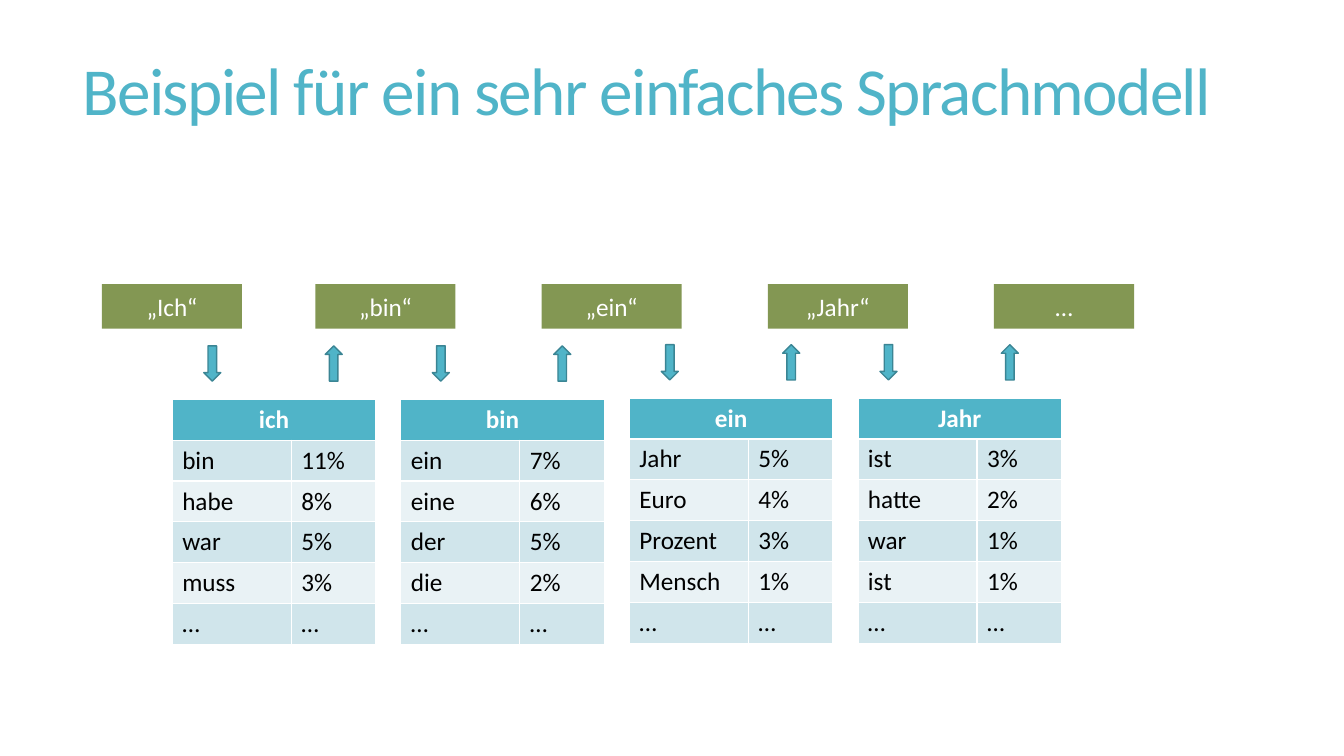
from pptx import Presentation
from pptx.dml.color import RGBColor
from pptx.enum.shapes import MSO_SHAPE as Shape
from pptx.enum.text import MSO_ANCHOR as Anchor, PP_ALIGN as Align
from pptx.util import Cm, Pt

COLORS = {
    "teal": "50B4C8",
    "teal_dark": "3B8594",
    "green": "839753",
    "band_dark": "D0E5EB",
    "band_light": "E9F2F5",
    "white": "FFFFFF",
    "black": "000000",
}
WORDS = [(2.57, "„Ich“"), (7.95, "„bin“"), (13.65, "„ein“"), (19.35, "„Jahr“"), (25.05, "…")]
MODELS = [
    ("ich", 10.06, 5.35, [("bin", "11%"), ("habe", "8%"), ("war", "5%"), ("muss", "3%"), ("…", "…")]),
    ("bin", 10.06, 11.11, [("ein", "7%"), ("eine", "6%"), ("der", "5%"), ("die", "2%"), ("…", "…")]),
    ("ein", 10.03, 16.88, [("Jahr", "5%"), ("Euro", "4%"), ("Prozent", "3%"), ("Mensch", "1%"), ("…", "…")]),
    ("Jahr", 10.03, 22.39, [("ist", "3%"), ("hatte", "2%"), ("war", "1%"), ("ist", "1%"), ("…", "…")]),
]
TABLE_LEFT, TABLE_STEP = 4.34, 5.76
COLUMN_WIDTHS = (3.0, 2.13)
ROW_HEIGHT = 1.03
ARROW_LENGTH, ARROW_WIDTH = 0.89, 0.43
ARROW_GAP = 3.06


def rgb(name):
    return RGBColor.from_string(COLORS[name])


def write(frame, text, size, color, bold=False, align=Align.LEFT):
    frame.text = text
    para = frame.paragraphs[0]
    para.alignment = align
    span = para.runs[0]
    span.font.name = "Calibri"
    span.font.size = Pt(size)
    span.font.bold = bold
    span.font.color.rgb = rgb(color)
    return span


deck = Presentation()
deck.slide_width, deck.slide_height = Cm(33.87), Cm(19.05)
page = deck.slides.add_slide(deck.slide_layouts[6])

title = page.shapes.add_textbox(Cm(1.83), Cm(1.4), Cm(29.92), Cm(4.6))
title.text_frame.word_wrap = True
span = write(title.text_frame, "Beispiel für ein sehr einfaches Sprachmodell", 48, "teal")
span._r.get_or_add_rPr().set("spc", "-120")
title.text_frame.paragraphs[0].line_spacing = 0.85

for left, word in WORDS:
    box = page.shapes.add_shape(Shape.RECTANGLE, Cm(left), Cm(7.16), Cm(3.53), Cm(1.12))
    box.shadow.inherit = False
    box.fill.solid()
    box.fill.fore_color.rgb = rgb("green")
    box.line.fill.background()
    box.text_frame.vertical_anchor = Anchor.MIDDLE
    write(box.text_frame, word, 18, "white", align=Align.CENTER)

for index, (word, top, arrow_x, followers) in enumerate(MODELS):
    frame = page.shapes.add_table(
        len(followers) + 1, 2, Cm(TABLE_LEFT + index * TABLE_STEP), Cm(top),
        Cm(sum(COLUMN_WIDTHS)), Cm(ROW_HEIGHT * (len(followers) + 1)))
    table = frame.table
    for column, width in zip(table.columns, COLUMN_WIDTHS):
        column.width = Cm(width)
    for row in table.rows:
        row.height = Cm(ROW_HEIGHT)

    header = table.cell(0, 0)
    header.merge(table.cell(0, 1))
    header.fill.solid()
    header.fill.fore_color.rgb = rgb("teal")
    write(header.text_frame, word, 18, "white", bold=True, align=Align.CENTER)
    for row_index, follower in enumerate(followers, 1):
        for column_index, text in enumerate(follower):
            cell = table.cell(row_index, column_index)
            cell.fill.solid()
            cell.fill.fore_color.rgb = rgb("band_dark" if row_index % 2 else "band_light")
            write(cell.text_frame, text, 18, "black")

    for center, rotation in ((arrow_x, 90), (arrow_x + ARROW_GAP, 270)):
        arrow = page.shapes.add_shape(
            Shape.RIGHT_ARROW, Cm(center - ARROW_LENGTH / 2), Cm(top - 0.9 - ARROW_WIDTH / 2),
            Cm(ARROW_LENGTH), Cm(ARROW_WIDTH))
        arrow.rotation = rotation
        arrow.shadow.inherit = False
        arrow.fill.solid()
        arrow.fill.fore_color.rgb = rgb("teal")
        arrow.line.color.rgb = rgb("teal_dark")
        arrow.line.width = Pt(1)

deck.save("out.pptx")
